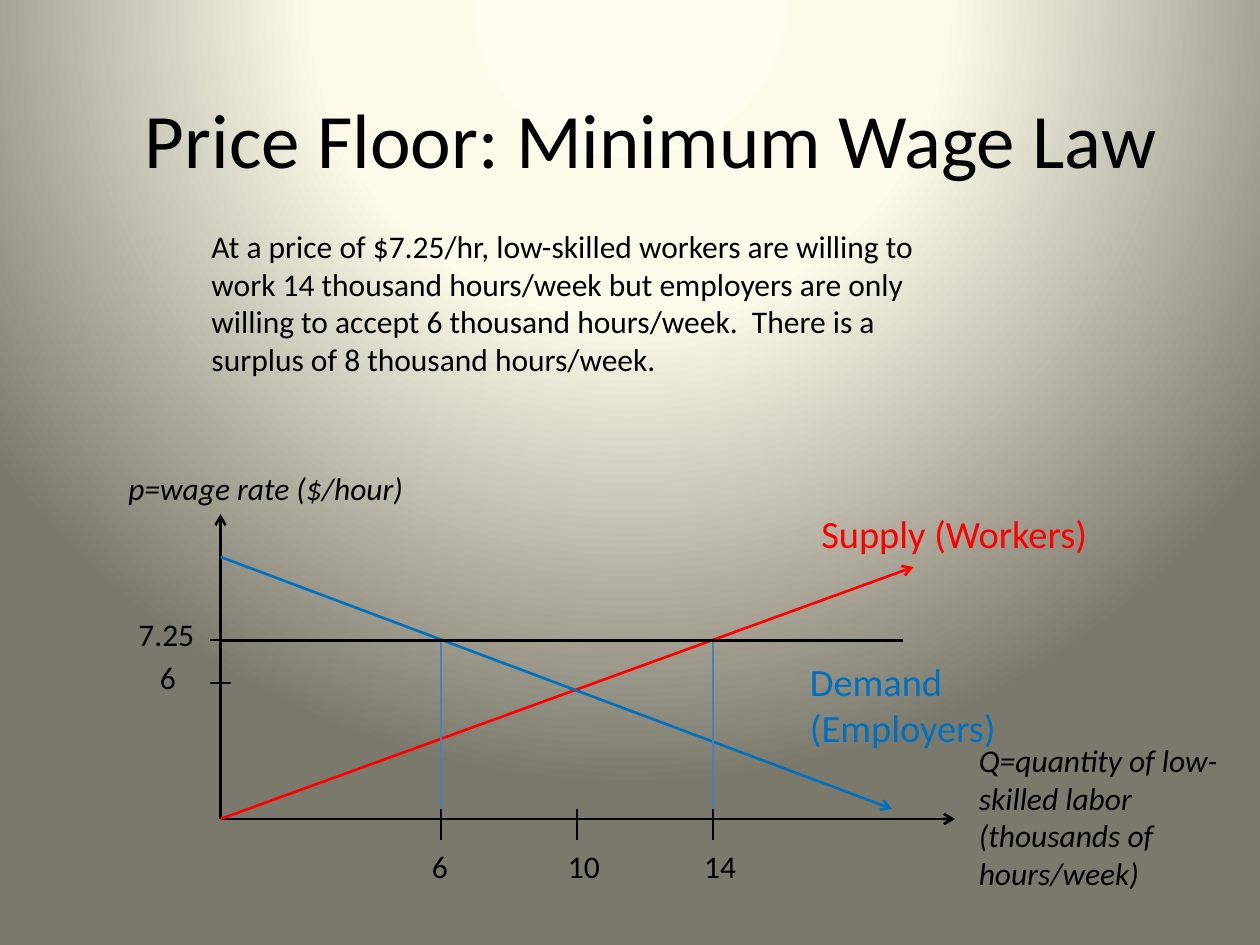
from dataclasses import dataclass

from lxml import etree
from pptx import Presentation
from pptx import oxml
from pptx import util as u
from pptx.dml.color import RGBColor
from pptx.enum import shapes, text
from pptx.oxml import ns


@dataclass(frozen=True)
class Theme:
    font: str = "Calibri"
    ink: str = "000000"
    supply: str = "FF0000"
    demand: str = "0070C0"
    guide: str = "4B7EBC"
    backdrop: tuple = ((0, "FEFCEE"), (40, "FDFAEA"), (100, "7B796B"))
    title_size: int = 44
    curve_size: int = 22
    body_size: int = 18
    axis_width: float = 1.5
    floor_width: float = 2
    tick_width: float = 1.25
    guide_width: float = 0.75


THEME = Theme()


@dataclass(frozen=True)
class Box:
    left: float
    top: float
    width: float
    height: float

    def lengths(self):
        return [u.Inches(n) for n in (self.left, self.top, self.width, self.height)]


def fill_backdrop(page):
    """Circular gradient centred above the page."""
    stops = "".join(
        f'<a:gs pos="{place * 1000}"><a:srgbClr val="{color}"/></a:gs>'
        for place, color in THEME.backdrop)
    gradient = oxml.parse_xml(
        f'<a:gradFill {ns.nsdecls("a")} rotWithShape="1"><a:gsLst>{stops}</a:gsLst>'
        '<a:path path="circle">'
        '<a:fillToRect l="50000" t="-80000" r="50000" b="180000"/>'
        '</a:path></a:gradFill>')
    fill = page.background.fill
    fill.solid()
    solid = page.element.find(".//" + ns.qn("p:bgPr")).find(ns.qn("a:solidFill"))
    solid.getparent().replace(solid, gradient)


def style(para, size, color, italic=False):
    para.font.name = THEME.font
    para.font.size = u.Pt(size)
    para.font.color.rgb = RGBColor.from_string(color)
    para.font.italic = italic


def add_label(page, box, lines, size=THEME.body_size, color=THEME.ink,
              italic=False, wrap=False, anchor=text.MSO_ANCHOR.TOP):
    frame = page.shapes.add_textbox(*box.lengths()).text_frame
    frame.word_wrap = wrap
    frame.auto_size = text.MSO_AUTO_SIZE.SHAPE_TO_FIT_TEXT
    frame.vertical_anchor = anchor
    frame.text = "\n".join(lines)
    for para in frame.paragraphs:
        style(para, size, color, italic)


def add_line(page, start, end, color=THEME.ink, width=THEME.tick_width, arrow=False):
    line = page.shapes.add_connector(
        shapes.MSO_CONNECTOR.STRAIGHT, *[u.Inches(n) for n in (*start, *end)])
    line.line.color.rgb = RGBColor.from_string(color)
    line.line.width = u.Pt(width)
    if arrow:
        etree.SubElement(line.line._get_or_add_ln(), ns.qn("a:tailEnd"), type="arrow")
    etree.SubElement(line._element.spPr, ns.qn("a:effectLst"))


def place_title(page, box, wording):
    title = page.shapes.title
    title.left, title.top, title.width, title.height = box.lengths()
    frame = title.text_frame
    frame.text = wording
    frame.vertical_anchor = text.MSO_ANCHOR.MIDDLE
    para = frame.paragraphs[0]
    para.alignment = text.PP_ALIGN.CENTER
    style(para, THEME.title_size, THEME.ink)


def draw_market(page, box):
    """Supply and demand graph; the box spans the two axes."""
    unit = 0.27  # inches per thousand hours and per dollar

    def point(across, up):
        return box.left + across, box.top + box.height - up

    def quantity(value):
        return 1.75 + (value - 6) * unit

    def price(value):
        return 1.08 + (value - 6) * unit

    # Axes and curves
    origin, floor = point(0, 0), price(7.25)
    for start, end, color in (
            (origin, point(box.width, 0), THEME.ink),
            (origin, point(0, box.height), THEME.ink),
            (origin, point(5.5, 2), THEME.supply),
            (point(0, 2.08), point(5.33, 0.08), THEME.demand)):
        add_line(page, start, end, color, THEME.axis_width, arrow=True)

    # Price ticks
    for value, inset, width in ((6, 0.58, 0.33), (7.25, 0.75, 0.65)):
        up = price(value)
        add_line(page, point(-0.08, up), point(0.08, up))
        add_label(page, Box(*point(-inset, up + 0.25), width, 0.4), [str(value)])

    # Guides where the floor meets the curves
    for value in (6, 14):
        across = quantity(value)
        add_line(page, point(across, floor), point(across, 0),
                 THEME.guide, THEME.guide_width)

    # Quantity ticks
    for value, width in ((6, 0.33), (10, 0.46), (14, 0.46)):
        across = quantity(value)
        add_line(page, point(across, -0.17), point(across, 0.08))
        add_label(page, Box(*point(across - 0.17, -0.17), width, 0.4), [str(value)])

    # Price floor
    add_line(page, point(0, floor), point(5.42, floor), width=THEME.floor_width)

    # Curve names
    for wording, corner, width, height, color in (
            ("Demand (Employers)", (4.58, 1.33), 2.75, 0.84, THEME.demand),
            ("Supply (Workers)", (4.67, 2.5), 3, 0.47, THEME.supply)):
        add_label(page, Box(*point(*corner), width, height), [wording],
                  THEME.curve_size, color, wrap=True, anchor=text.MSO_ANCHOR.MIDDLE)

    # Axis names
    add_label(page, Box(*point(-0.83, 2.83), 2.41, 0.4),
              ["p=wage rate ($/hour)"], italic=True)
    add_label(page, Box(*point(5.92, 0.67), 2.12, 1.31),
              ["Q=quantity of low-", "skilled labor", "(thousands of", "hours/week)"],
              italic=True)


def main():
    deck = Presentation()
    deck.slide_width, deck.slide_height = u.Inches(10), u.Inches(7.5)
    page = deck.slides.add_slide(deck.slide_layouts.get_by_name("Title Only"))
    fill_backdrop(page)
    place_title(page, Box(0.67, 0.47, 9, 1.25), "Price Floor: Minimum Wage Law")
    draw_market(page, Box(1.75, 4.08, 5.83, 2.42))
    add_label(page, Box(1.58, 1.75, 6.25, 1.31), [
        "At a price of $7.25/hr, low-skilled workers are willing to work 14 thousand "
        "hours/week but employers are only willing to accept 6 thousand hours/week.  "
        "There is a surplus of 8 thousand hours/week."], wrap=True)
    deck.save("out.pptx")


if __name__ == "__main__":
    main()
